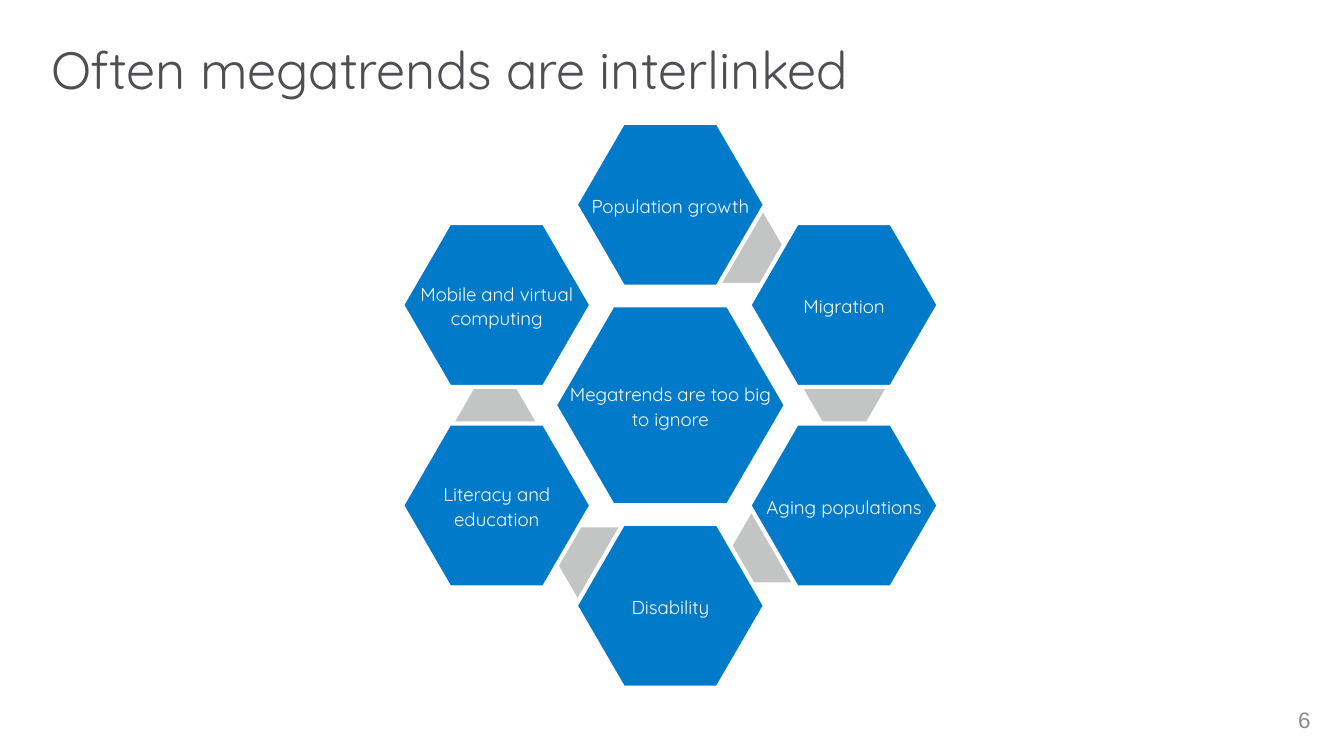
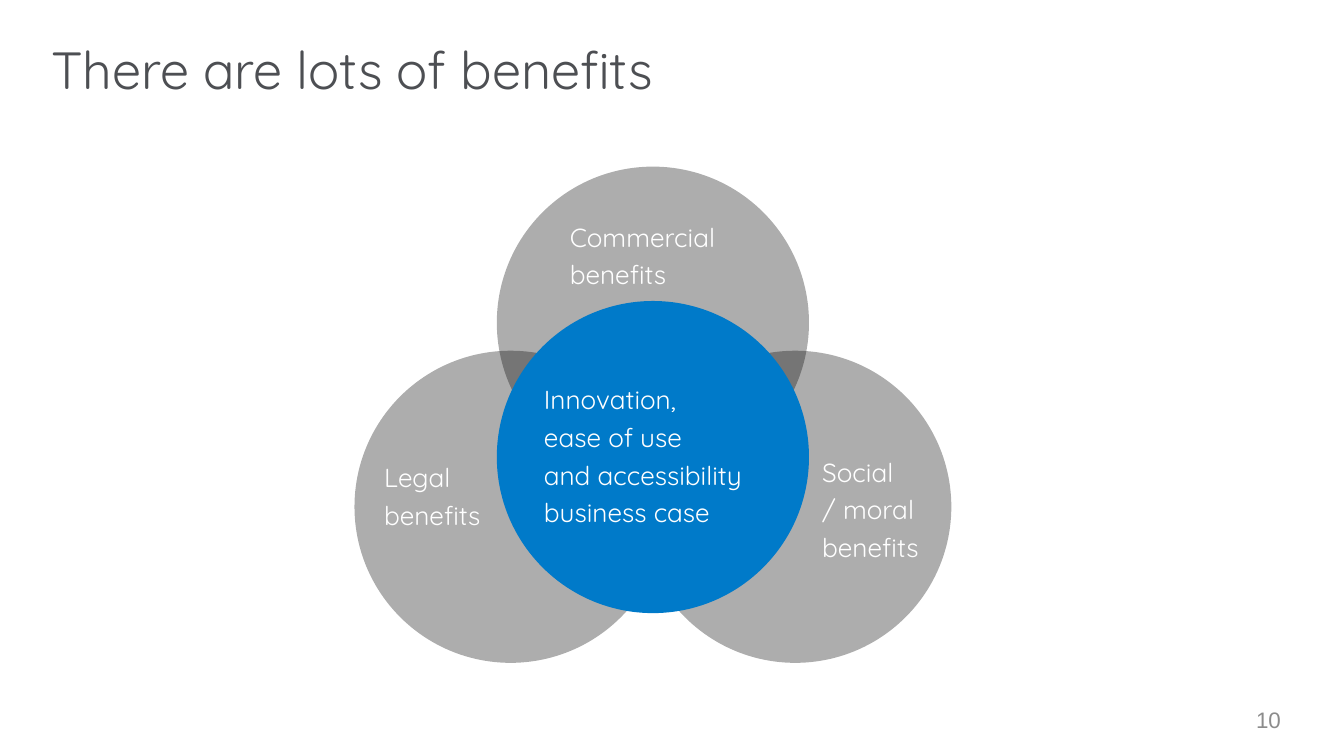
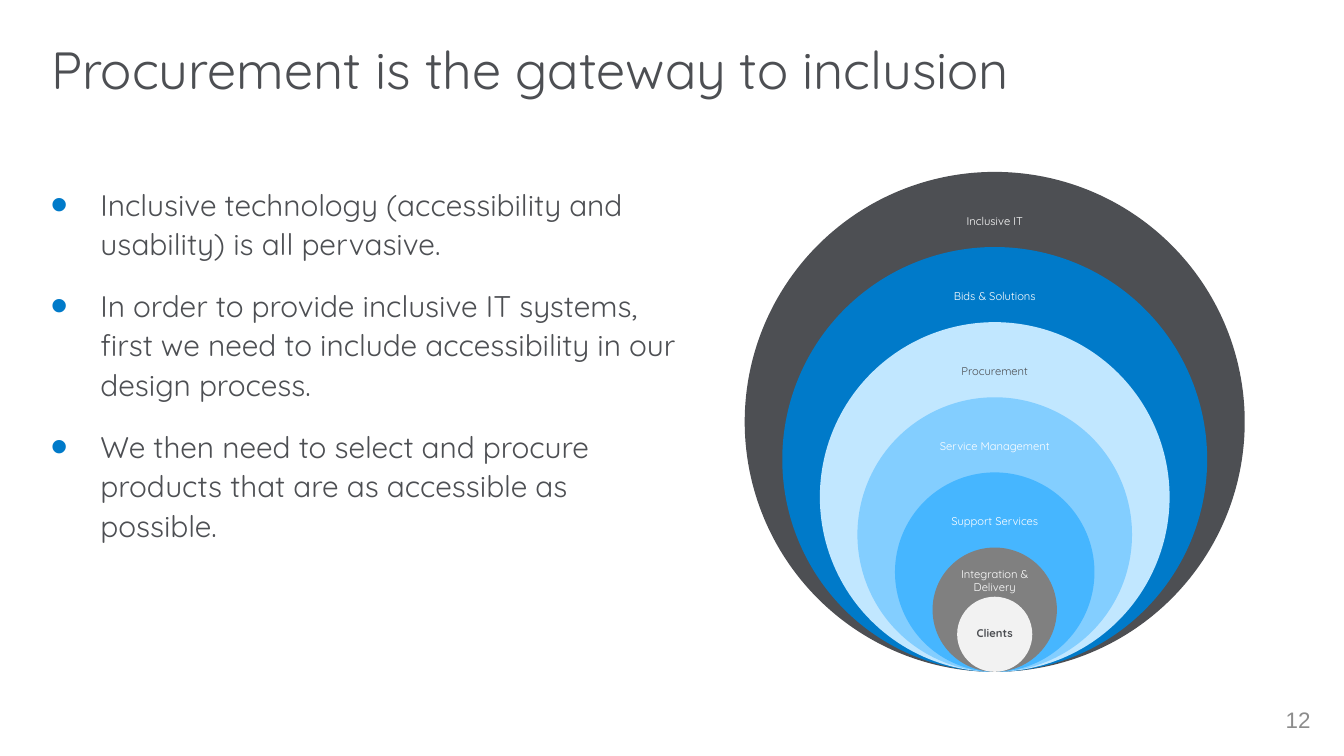
from copy import deepcopy
from dataclasses import dataclass
from math import cos, radians, sin

from lxml import etree
from pptx import Presentation
from pptx import util as u
from pptx.dml.color import RGBColor
from pptx.enum import shapes, text
from pptx.oxml.ns import qn

Cm, Pt = u.Cm, u.Pt
Kind = shapes.MSO_SHAPE
Align = text.PP_ALIGN
Anchor = text.MSO_ANCHOR

COLOURS = {
    "ink": "4D4F53",
    "blue": "007AC9",
    "white": "FFFFFF",
    "black": "000000",
    "link": "B2B4B3",
    "number": "8C8C8C",
    "pale": "C1E7FF",
    "light": "83CEFF",
    "bright": "46B6FF",
    "grey": "808080",
    "cloud": "F2F2F2",
}
FONT = "Quicksand"


@dataclass
class Trend:
    label: str
    angle: float  # degrees clockwise from the top
    link: tuple[float, float] | None = None  # offset of the grey link from the hub


@dataclass
class Benefit:
    label: str
    circle: tuple[float, float]  # offset of the circle from the middle one
    box: tuple[float, float, float, float]
    colour: str = "black"
    opacity: int = 32


@dataclass
class Ring:
    label: str
    colour: str
    diameter: float
    label_width: float
    drop: float = 0.94  # from the top of the ring to the middle of its label
    ink: str = "white"
    bold: bool = False


HUB = (12.67, 7.66)
HUB_SIZE = (4.37, 3.78)
TREND_SIZE = (3.58, 3.1)
LINK_SIZE = (1.65, 1.42)
TREND_RADIUS = 3.79
TRENDS = [
    Trend("Population growth", 0, (1.36, -2.98)),
    Trend("Migration", 60, (3.29, -0.32)),
    Trend("Aging populations", 120, (1.94, 2.68)),
    Trend("Disability", 180, (-1.36, 2.98)),
    Trend("Literacy and education", 240, (-3.31, 0.34)),
    Trend("Mobile and virtual computing", 300),
]

VENN_CENTRE = (12.34, 8.64)
VENN_SIZE = (5.9, 5.9)
BENEFITS = [
    Benefit("Commercial benefits", (0, -2.54), (10.52, 3.94, 4.6, 1.68)),
    Benefit("Legal benefits", (-2.69, 0.94), (7.01, 8.48, 2.87, 1.68)),
    Benefit("Social\n/ moral benefits", (2.69, 0.94), (15.29, 8.38, 3.02, 2.39)),
    Benefit("Innovation,\nease of use\nand accessibility business case", (0, 0),
            (10.03, 7.01, 5.23, 3.12), "blue", 100),
]

RING_X, RING_BOTTOM = 18.8, 12.7
RING_OUTER, RING_STEP = 9.45, 1.42
RINGS = [
    Ring("Inclusive IT", "ink", RING_OUTER, 3.56),
    Ring("Bids & Solutions", "blue", RING_OUTER - RING_STEP, 3.45),
    Ring("Procurement", "pale", RING_OUTER - 2 * RING_STEP, 3.43, ink="ink"),
    Ring("Service Management", "light", RING_OUTER - 3 * RING_STEP, 2.82),
    Ring("Support Services", "bright", RING_OUTER - 4 * RING_STEP, 2.46),
    Ring("Integration & Delivery", "grey", RING_OUTER - 5 * RING_STEP, 1.6, drop=0.64),
    Ring("Clients", "cloud", RING_STEP, 1.0, drop=0.71, ink="ink", bold=True),
]
STEPS = [
    "Inclusive technology (accessibility and usability) is all pervasive.",
    "In order to provide inclusive IT systems, first we need to include "
    "accessibility in our design process.",
    "We then need to select and procure products that are as accessible as possible.",
]


def colour_of(name: str) -> RGBColor:
    return RGBColor.from_string(COLOURS[name])


def around(centre: tuple[float, float], size: tuple[float, float],
           offset: tuple[float, float] = (0, 0)) -> tuple[float, float, float, float]:
    """Return left, top, width and height of a box by its middle."""
    return (centre[0] + offset[0] - size[0] / 2,
            centre[1] + offset[1] - size[1] / 2, *size)


def write(frame, *paragraphs: str, size: float, font: str = FONT, colour: str = "white",
          bold: bool = False, align=Align.LEFT, anchor=Anchor.TOP,
          spacing: float | None = None, inset: float | None = None,
          gap: tuple[float, float] = (0, 0), bullet: bool = False) -> None:
    """Fill a text frame; a newline inside a paragraph is a line break."""
    frame.word_wrap = True
    frame.auto_size = text.MSO_AUTO_SIZE.NONE
    frame.vertical_anchor = anchor
    if inset is not None:
        frame.margin_left = frame.margin_right = Cm(inset)
        frame.margin_top = frame.margin_bottom = Cm(inset)
    for index, words in enumerate(paragraphs):
        para = frame.add_paragraph() if index else frame.paragraphs[0]
        para.text = words
        para.alignment = align
        para.line_spacing = spacing
        para.space_before = Pt(gap[0] if index else 0)
        para.space_after = Pt(gap[1])
        if bullet:
            add_bullet(para)
        for span in para.runs:
            span.font.name, span.font.size, span.font.bold = font, Pt(size), bold
            span.font.color.rgb = colour_of(colour)
        for line_break in para._p.findall(qn("a:br")):
            line_break.append(deepcopy(para.runs[0]._r.rPr))


def add_bullet(para) -> None:
    props = para._p.get_or_add_pPr()
    props.set("marL", str(Cm(0.94)))
    props.set("indent", str(-Cm(0.94)))
    tint = etree.SubElement(props, qn("a:buClr"))
    etree.SubElement(tint, qn("a:srgbClr"), val=COLOURS["blue"])
    etree.SubElement(props, qn("a:buSzPct"), val="165000")
    etree.SubElement(props, qn("a:buFont"), typeface="Arial")
    etree.SubElement(props, qn("a:buChar"), char="•")


def add_text(page, place: tuple[float, float, float, float], *paragraphs: str,
             **style) -> None:
    box = page.shapes.add_textbox(*map(Cm, place))
    write(box.text_frame, *paragraphs, **style)


def add_figure(page, kind, place: tuple[float, float, float, float], colour: str,
               opacity: int = 100, outline: str | None = None):
    figure = page.shapes.add_shape(kind, *map(Cm, place))
    figure.shadow.inherit = False
    figure.fill.solid()
    figure.fill.fore_color.rgb = colour_of(colour)
    if opacity < 100:
        tint = figure._element.spPr.find(qn("a:solidFill"))[0]
        etree.SubElement(tint, qn("a:alpha"), val=str(opacity * 1000))
    if outline:
        figure.line.color.rgb = colour_of(outline)
        figure.line.width = Pt(2.25)
    else:
        figure.line.fill.background()
    return figure


def add_hexagon(page, place: tuple[float, float, float, float], label: str = "") -> None:
    """Add a blue hexagon with its label, or a grey link without one."""
    colour, opacity = ("blue", 100) if label else ("link", 77)
    hexagon = add_figure(page, Kind.HEXAGON, place, colour, opacity, outline="white")
    hexagon.adjustments[0] = 0.29
    if label:
        add_text(page, place, label, size=10, align=Align.CENTER,
                 anchor=Anchor.MIDDLE, spacing=1.1, inset=0.03)


def add_page(deck, title: str, number: int, number_left: float = 19.1):
    page = deck.slides.add_slide(deck.slide_layouts[5])
    heading = page.shapes.title
    heading.left, heading.top, heading.width, heading.height = map(
        Cm, (0.71, 0.58, 23.22, 2.39))
    write(heading.text_frame, title, size=28, colour="ink")
    add_text(page, (number_left, 13.23, 5.92, 0.76), str(number), size=12, font="Arial",
             colour="number", align=Align.RIGHT, anchor=Anchor.MIDDLE)
    return page


def build_megatrends(deck) -> None:
    page = add_page(deck, "Often megatrends are interlinked", 6)
    add_hexagon(page, around(HUB, HUB_SIZE), "Megatrends are too big\nto ignore")
    for trend in TRENDS:
        if trend.link:
            add_hexagon(page, around(HUB, LINK_SIZE, trend.link))
        turn = radians(trend.angle)
        offset = (TREND_RADIUS * sin(turn), -TREND_RADIUS * cos(turn))
        add_hexagon(page, around(HUB, TREND_SIZE, offset), trend.label)


def build_benefits(deck) -> None:
    page = add_page(deck, "There are lots of benefits", 10, number_left=18.54)
    for benefit in BENEFITS:
        add_figure(page, Kind.OVAL, around(VENN_CENTRE, VENN_SIZE, benefit.circle),
                   benefit.colour, benefit.opacity)
    for benefit in BENEFITS:
        add_text(page, benefit.box, benefit.label, size=14, spacing=1.2)


def build_procurement(deck) -> None:
    page = add_page(deck, "Procurement is the gateway to inclusion", 12)
    add_text(page, (0.71, 3.33, 12.4, 8.81), *STEPS, size=16, colour="ink",
             spacing=1.1, gap=(6.2, 6), bullet=True)
    for ring in RINGS:
        top = RING_BOTTOM - ring.diameter
        add_figure(page, Kind.OVAL, (RING_X - ring.diameter / 2, top,
                                     ring.diameter, ring.diameter), ring.colour)
        add_text(page, around((RING_X, top + ring.drop), (ring.label_width, 0.7)),
                 ring.label, size=6, colour=ring.ink, bold=ring.bold,
                 align=Align.CENTER, anchor=Anchor.MIDDLE, spacing=0.9, inset=0.12)


def main() -> None:
    deck = Presentation()
    deck.slide_width, deck.slide_height = Cm(25.4), Cm(14.29)
    build_megatrends(deck)
    build_benefits(deck)
    build_procurement(deck)
    deck.save("out.pptx")


if __name__ == "__main__":
    main()
